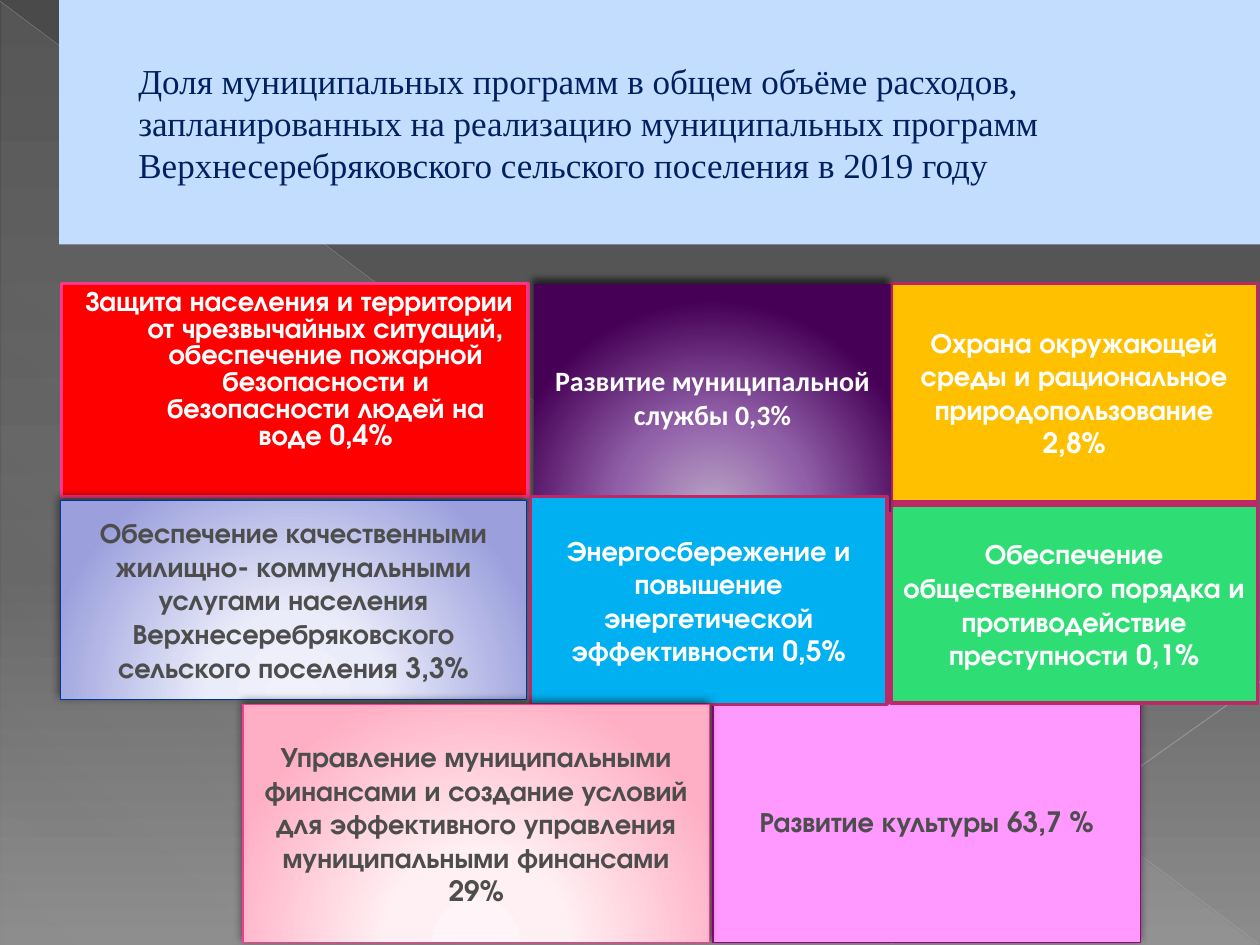
from lxml.etree import SubElement
from pptx import Presentation
from pptx.dml.color import RGBColor
from pptx.enum.shapes import MSO_CONNECTOR, MSO_SHAPE
from pptx.enum.text import MSO_ANCHOR, PP_ALIGN
from pptx.oxml.ns import qn
from pptx.util import Inches, Pt

SANS = "TeX Gyre Adventor"
WHITE, GRAY = "FFFFFF", "4D4D4D"
RASPBERRY, PINK = "BD2968", "FF388C"
SOFT_SHADOW = (50, 5, 2)

TITLE = ("Доля муниципальных программ в общем объёме расходов, запланированных на реализацию "
         "муниципальных программ Верхнесеребряковского сельского поселения в 2019 году")

BACKDROP = [(0, "4A4A4A", 100), (60, "626262", 100), (100, "8C8C8C", 100)]
SHEEN = [(0, "D2D2D2", 10), (70, "D2D2D2", 8), (100, "D2D2D2", 1)]
RAYS = [
    ((0, 0.01, 9.99, 7.49), "BFBFBF", 0.39, 35),
    ((10, 5.41, 7.07, 7.49), "C6C6C6", 0.47, 45),
]

LILAC = [(0, "F0F1FB", 100), (34, "EBECF9", 100), (100, "9BA0DD", 100)]
PURPLE = [(0, "BBA5C6", 100), (46, "905FA8", 100), (100, "460055", 100)]
ROSE = [(0, "FFF4F7", 100), (34, "FFF0F3", 100), (100, "FFAFC5", 100)]

PROGRAMS = [
    dict(text="Защита населения и территории от чрезвычайных ситуаций, обеспечение пожарной "
              "безопасности и безопасности людей на воде 0,4%",
         box=(0.49, 2.25, 3.7, 1.69), fill="FF0000", border=(PINK, 2), hanging=True),
    dict(text="Обеспечение качественными жилищно- коммунальными услугами населения "
              "Верхнесеребряковского сельского поселения 3,3%",
         box=(0.48, 3.97, 3.7, 1.58), fill=LILAC, border=("00349E", 0.75),
         color=GRAY, shadow=SOFT_SHADOW),
    dict(text="Развитие культуры 63,7 %",
         box=(5.66, 5.55, 3.39, 1.93), fill="FF99FF", border=("9C007F", 0.75),
         color=GRAY, shadow=SOFT_SHADOW),
    dict(text="Охрана окружающей среды и рациональное природопользование 2,8%",
         box=(7.07, 2.25, 2.91, 1.73), fill="FFC000", border=(RASPBERRY, 2)),
    dict(text="Обеспечение общественного порядка и противодействие\nпреступности 0,1%",
         box=(7.07, 4.01, 2.91, 1.57), fill="2FDD75", border=(RASPBERRY, 2)),
    dict(text="Развитие муниципальной службы 0,3%",
         box=(4.24, 2.25, 2.83, 1.81), fill=PURPLE, font="Calibri", shadow=(60, 4, 3)),
    dict(text="Энергосбережение и повышение энергетической эффективности 0,5%",
         box=(4.21, 3.94, 2.83, 1.65), fill="00B0F0", border=(RASPBERRY, 2)),
    dict(text="Управление муниципальными финансами и создание условий для эффективного "
              "управления муниципальными финансами 29%",
         box=(1.93, 5.59, 3.7, 1.89), fill=ROSE, border=(PINK, 0.75),
         color=GRAY, shadow=SOFT_SHADOW),
]


def rgb(color):
    return RGBColor.from_string(color)


def add(parent, tag, **attributes):
    return SubElement(parent, qn(tag), {key: str(value) for key, value in attributes.items()})


def add_color(parent, color, opacity):
    add(add(parent, "a:srgbClr", val=color), "a:alpha", val=opacity * 1000)


def set_gradient(fill, owner, stops, angle=None):
    fill.solid()
    solid = owner.xpath(".//a:solidFill")[0]
    gradient = add(solid.getparent(), "a:gradFill", rotWithShape=1)
    solid.getparent().replace(solid, gradient)
    stop_list = add(gradient, "a:gsLst")
    for position, color, opacity in stops:
        add_color(add(stop_list, "a:gs", pos=position * 1000), color, opacity)
    if angle is None:
        circle = add(gradient, "a:path", path="circle")
        add(circle, "a:fillToRect", l=50000, t=155000, r=50000, b=-55000)
    else:
        add(gradient, "a:lin", ang=angle * 60000, scaled=0)


def add_block(slide, kind, box, fill, angle=None, border=None, shadow=None):
    block = slide.shapes.add_shape(kind, *map(Inches, box))
    block.shadow.inherit = False
    if isinstance(fill, str):
        block.fill.solid()
        block.fill.fore_color.rgb = rgb(fill)
    else:
        set_gradient(block.fill, block._element.spPr, fill, angle)
    if border:
        block.line.color.rgb = rgb(border[0])
        block.line.width = Pt(border[1])
    else:
        block.line.fill.background()
    if shadow:
        opacity, blur, distance = shadow
        effects = block._element.spPr.find(qn("a:effectLst"))
        outer = add(effects, "a:outerShdw", blurRad=Pt(blur), dist=Pt(distance),
                    dir=245 * 60000, rotWithShape=0)
        add_color(outer, "000000", opacity)
    return block


def write(block, text, font, size, color, bold, align, indent=(0, 0), spacing=None,
          anchor=MSO_ANCHOR.MIDDLE):
    frame = block.text_frame
    frame.text = text
    frame.word_wrap = True
    frame.vertical_anchor = anchor
    for paragraph in frame.paragraphs:
        paragraph.alignment = align
        paragraph.line_spacing = spacing
        properties = paragraph._p.get_or_add_pPr()
        properties.set("marL", str(Inches(indent[0])))
        properties.set("indent", str(Inches(indent[1])))
        for run in paragraph.runs:
            run.font.name = font
            run.font.size = Pt(size)
            run.font.bold = bold
            run.font.color.rgb = rgb(color)


def add_ray(slide, ends, color, width, opacity):
    ray = slide.shapes.add_connector(MSO_CONNECTOR.STRAIGHT, *map(Inches, ends))
    ray.line.color.rgb = rgb(color)
    ray.line.width = Pt(width)
    properties = ray._element.spPr
    add(properties.xpath(".//a:srgbClr")[0], "a:alpha", val=opacity * 1000)
    add(properties, "a:effectLst")


def main():
    deck = Presentation()
    deck.slide_width, deck.slide_height = Inches(10), Inches(7.5)
    slide = deck.slides.add_slide(deck.slide_layouts[6])

    set_gradient(slide.background.fill, slide._element, BACKDROP, 90)
    add_block(slide, MSO_SHAPE.RIGHT_TRIANGLE, (0.01, 0.02, 9.98, 7.48), SHEEN, 133)
    for ray in RAYS:
        add_ray(slide, *ray)

    heading = add_block(slide, MSO_SHAPE.RECTANGLE, (0.47, 0, 9.53, 1.94), "C3DDFF")
    write(heading, TITLE, "Times New Roman", 20, "002060", False, PP_ALIGN.LEFT, (0.53, 0))

    for program in PROGRAMS:
        tile = add_block(slide, MSO_SHAPE.RECTANGLE, program["box"], program["fill"],
                         border=program.get("border"), shadow=program.get("shadow"))
        layout = {}
        if program.get("hanging"):
            layout = dict(indent=(0.49, -0.42), spacing=0.8, anchor=MSO_ANCHOR.TOP)
        write(tile, program["text"], program.get("font", SANS), 16,
              program.get("color", WHITE), True, PP_ALIGN.CENTER, **layout)

    deck.save("out.pptx")


if __name__ == "__main__":
    main()
